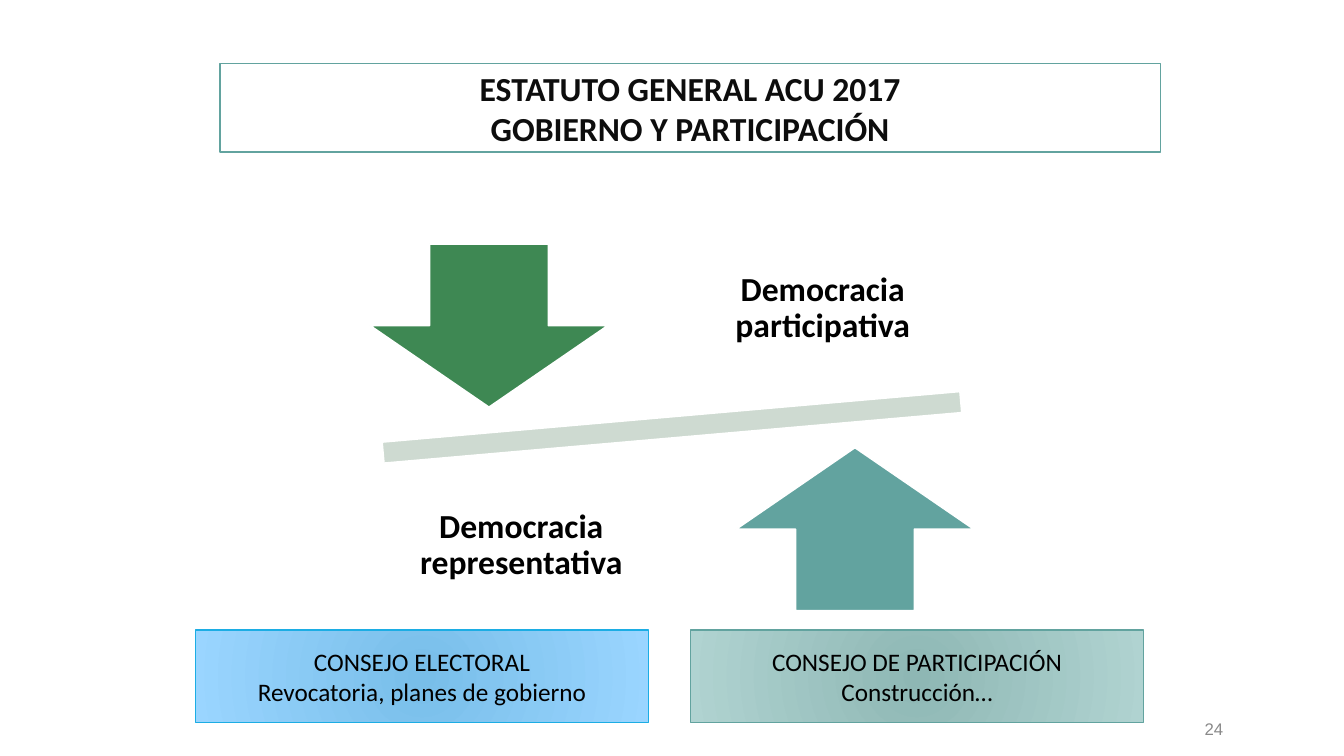
"""Build the slide on government and participation in the 2017 statute."""
from dataclasses import dataclass

from lxml.etree import SubElement
from pptx import Presentation
from pptx.dml.color import RGBColor
from pptx.enum.shapes import MSO_SHAPE
from pptx.enum.text import MSO_ANCHOR, PP_ALIGN
from pptx.oxml.ns import qn
from pptx.util import Inches, Pt


@dataclass(frozen=True)
class Theme:
    white: str = "FFFFFF"
    black: str = "000000"
    ink: str = "0D0D0D"
    gray: str = "898989"
    teal: str = "62A39F"
    green: str = "3E8853"
    bar: str = "CEDAD1"
    blue: str = "1CADE4"
    sky: tuple = ("78BEE9", "9AD5FF")
    sage: tuple = ("8EB7B4", "B0D3D1")
    head: int = 24
    body: int = 18
    small: int = 12
    font: str = "Calibri"
    plain: str = "Arial"


theme = Theme()


def draw(kind, box, fill, line, width):
    shape = slide.shapes.add_shape(kind, *map(Inches, box))
    shape.shadow.inherit = False
    if isinstance(fill, tuple):
        shape.fill.gradient()
        for stop, color in zip(shape.fill.gradient_stops, fill):
            stop.color.rgb = RGBColor.from_string(color)
        grad = shape._element.spPr.find(qn("a:gradFill"))
        grad.remove(grad.find(qn("a:lin")))
        ring = SubElement(grad, qn("a:path"), path="circle")
        SubElement(ring, qn("a:fillToRect"), dict.fromkeys("ltrb", "100000"))
    else:
        shape.fill.solid()
        shape.fill.fore_color.rgb = RGBColor.from_string(fill)
    shape.line.color.rgb = RGBColor.from_string(line)
    shape.line.width = Pt(width)
    return shape


def write(shape, lines, color, size, bold=False, font=theme.font,
          align=PP_ALIGN.CENTER, space=1.0, inset=None):
    frame = shape.text_frame
    frame.text = "\n".join(lines)
    look = {"word_wrap": True, "vertical_anchor": MSO_ANCHOR.MIDDLE}
    if inset is not None:
        for side in ("left", "top", "right", "bottom"):
            look[f"margin_{side}"] = Inches(inset)
    for name, value in look.items():
        setattr(frame, name, value)
    style = {"name": font, "size": Pt(size), "bold": bold}
    for par in frame.paragraphs:
        par.alignment = align
        par.line_spacing = space
        for run in par.runs:
            for name, value in style.items():
                setattr(run.font, name, value)
            run.font.color.rgb = RGBColor.from_string(color)


deck = Presentation()
deck.slide_width, deck.slide_height = Inches(13.33), Inches(7.5)
slide = deck.slides.add_slide(deck.slide_layouts[6])

title = draw(MSO_SHAPE.RECTANGLE, (2.18, 0.63, 9.33, 0.88),
             theme.white, theme.teal, 1.25)
write(title, ["ESTATUTO GENERAL ACU 2017", "GOBIERNO Y PARTICIPACIÓN"],
      theme.ink, theme.head, bold=True)

number = slide.shapes.add_textbox(*map(Inches, (11.85, 7.08, 1.06, 0.3)))
write(number, ["24"], theme.gray, theme.small, font=theme.plain,
      align=PP_ALIGN.LEFT)

beam = draw(MSO_SHAPE.MATH_MINUS, (2.75, 3.79, 7.83, 0.9),
            theme.bar, theme.white, 1.25)
beam.rotation = 355

sides = (
    (MSO_SHAPE.DOWN_ARROW, (3.67, 2.42), theme.green,
     "Democracia participativa", (6.9, 2.21)),
    (MSO_SHAPE.UP_ARROW, (7.3, 4.44), theme.teal,
     "Democracia representativa", (3.91, 4.56)),
)
for kind, spot, color, words, place in sides:
    draw(kind, (*spot, 2.36, 1.62), color, theme.white, 1.25)
    label = slide.shapes.add_textbox(*map(Inches, (*place, 2.52, 1.7)))
    write(label, [words], theme.black, theme.head, bold=True,
          space=0.9, inset=0.19)

boards = (
    (1.94, theme.sky, theme.blue,
     ["CONSEJO ELECTORAL", "Revocatoria, planes de gobierno"]),
    (6.85, theme.sage, theme.teal,
     ["CONSEJO DE PARTICIPACIÓN", "Construcción…"]),
)
for left, fill, edge, lines in boards:
    board = draw(MSO_SHAPE.RECTANGLE, (left, 6.25, 4.49, 0.92),
                 fill, edge, 0.75)
    write(board, lines, theme.black, theme.body)

deck.save("out.pptx")
